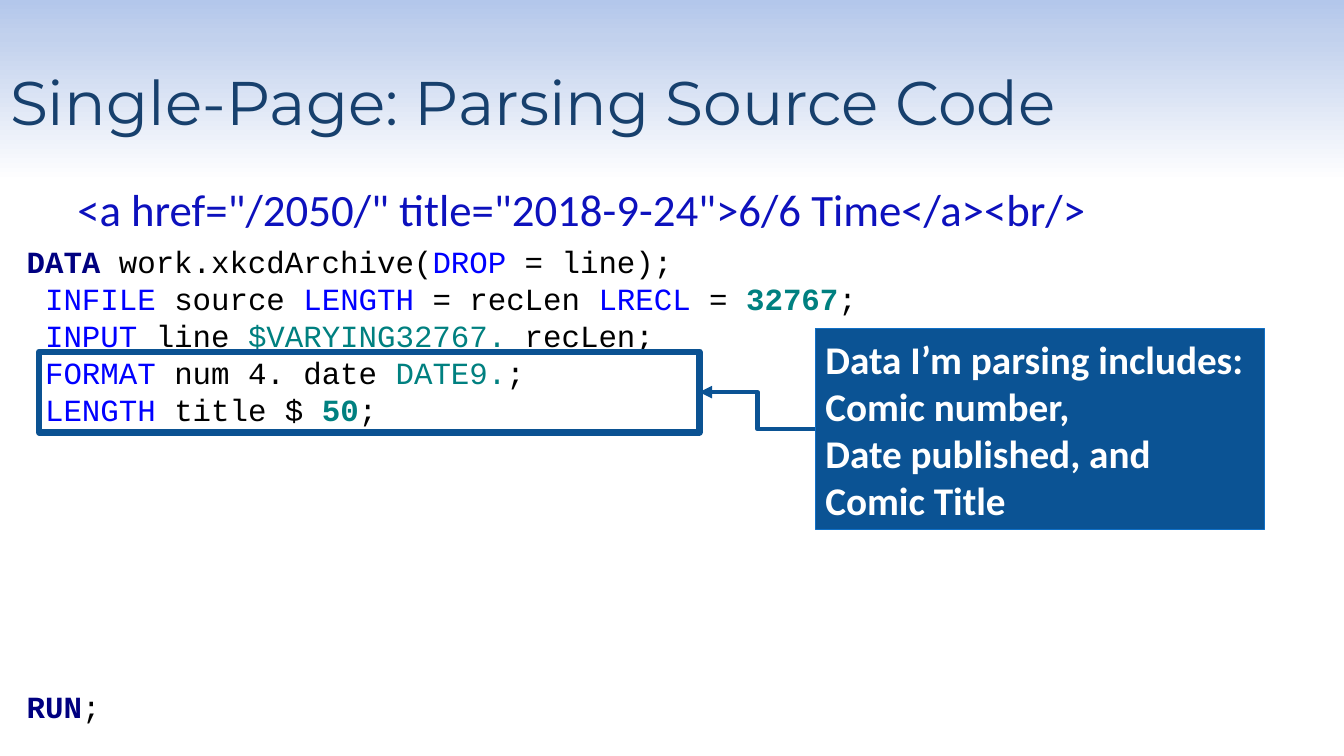
from lxml import etree
from pptx import Presentation
from pptx.dml.color import RGBColor
from pptx.enum import shapes, text
from pptx.oxml import ns
from pptx.util import Pt

TITLE_BLUE = RGBColor(0x17, 0x40, 0x6D)
TAG_BLUE = RGBColor(0x0D, 0x11, 0xBD)
CALLOUT_BLUE = RGBColor(0x0B, 0x53, 0x94)
CALLOUT_EDGE = RGBColor(0x0F, 0x6F, 0xC6)
FRAME_BLUE = RGBColor(0x0B, 0x52, 0x92)
WHITE = RGBColor(0xFF, 0xFF, 0xFF)
BLACK = RGBColor(0, 0, 0)
NAVY = RGBColor(0, 0, 0x80)
BLUE = RGBColor(0, 0, 0xFF)
TEAL = RGBColor(0, 0x80, 0x80)
SKY = RGBColor(0xB3, 0xC7, 0xEB)
PALE_SKY = RGBColor(0xC2, 0xD1, 0xED)

SKY_STOPS = [(0, SKY), (5, PALE_SKY), (24, WHITE), (100, WHITE)]

# Token kinds: colour and bold
STEP, KEYWORD, PLAIN = (NAVY, True), (BLUE, False), (BLACK, False)
NUMBER, FORMAT = (TEAL, True), (TEAL, False)

CODE = [
    [("DATA ", STEP), ("work.xkcdArchive(", PLAIN), ("DROP ", KEYWORD),
     ("= line);", PLAIN)],
    [(" INFILE ", KEYWORD), ("source ", PLAIN), ("LENGTH ", KEYWORD),
     ("= recLen ", PLAIN), ("LRECL ", KEYWORD), ("= ", PLAIN),
     ("32767", NUMBER), (";", PLAIN)],
    [(" INPUT ", KEYWORD), ("line ", PLAIN), ("$VARYING32767. ", FORMAT),
     ("recLen;", PLAIN)],
    [(" FORMAT ", KEYWORD), ("num 4. date ", PLAIN), ("DATE9.", FORMAT),
     (";", PLAIN)],
    [(" LENGTH ", KEYWORD), ("title $ ", PLAIN), ("50", NUMBER), (";", PLAIN)],
    [("RUN", STEP), (";", PLAIN)],
]
RUN_GAP = Pt(186)


def style(font, name, size, color, bold=False):
    font.name, font.size, font.bold = name, Pt(size), bold
    font.color.rgb = color


def paint_background(slide):
    fill = slide.background.fill
    fill.gradient()
    fill.gradient_angle = 270
    stops = fill._fill._gradFill.find(ns.qn("a:gsLst"))
    for stop in list(stops):
        stops.remove(stop)
    for percent, color in SKY_STOPS:
        stop = etree.SubElement(stops, ns.qn("a:gs"), pos=str(percent * 1000))
        etree.SubElement(stop, ns.qn("a:srgbClr"), val=str(color))


def fill_placeholder(holder, box, words, font_name, size, color):
    holder.left, holder.top, holder.width, holder.height = map(Pt, box)
    frame = holder.text_frame
    frame.text = words
    frame.auto_size = text.MSO_AUTO_SIZE.NONE
    line = frame.paragraphs[0]
    line.alignment = text.PP_ALIGN.LEFT
    line.space_before = Pt(0)
    properties = line._p.get_or_add_pPr()
    properties.set("marL", "0")
    properties.set("indent", "0")
    etree.SubElement(properties, ns.qn("a:buNone"))
    style(line.runs[0].font, font_name, size, color)
    return frame


def add_code(slide, box, lines):
    frame = slide.shapes.add_textbox(*map(Pt, box)).text_frame
    frame.word_wrap = True
    for number, tokens in enumerate(lines):
        line = frame.add_paragraph() if number else frame.paragraphs[0]
        for words, (color, bold) in tokens:
            run = line.add_run()
            run.text = words
            style(run.font, "Courier New", 22, color, bold)
    frame.paragraphs[-1].space_before = RUN_GAP


def add_box(slide, box, edge, edge_width, fill=None):
    rectangle = slide.shapes.add_shape(
        shapes.MSO_SHAPE.RECTANGLE, *map(Pt, box))
    rectangle.shadow.inherit = False
    if fill is None:
        rectangle.fill.background()
    else:
        rectangle.fill.solid()
        rectangle.fill.fore_color.rgb = fill
    rectangle.line.color.rgb = edge
    rectangle.line.width = Pt(edge_width)
    return rectangle


def write_callout(callout, words):
    frame = callout.text_frame
    frame.word_wrap = True
    frame.text = words
    line = frame.paragraphs[0]
    line.alignment = text.PP_ALIGN.LEFT
    for run in line.runs:
        style(run.font, "Calibri", 28, WHITE, True)


def add_elbow_arrow(slide, source, target):
    """Join the left side of source to the right side of target."""
    arrow = slide.shapes.add_connector(
        shapes.MSO_CONNECTOR.ELBOW, 0, 0, 0, 0)
    arrow.begin_connect(source, 1)
    arrow.end_connect(target, 3)
    arrow.line.color.rgb = CALLOUT_BLUE
    arrow.line.width = Pt(3)
    etree.SubElement(arrow.line._get_or_add_ln(), ns.qn("a:tailEnd"),
                     type="triangle")
    etree.SubElement(arrow._element.spPr, ns.qn("a:effectLst"))


def main():
    deck = Presentation()
    deck.slide_width, deck.slide_height = Pt(960), Pt(540)
    slide = deck.slides.add_slide(deck.slide_layouts[1])
    paint_background(slide)
    title = fill_placeholder(
        slide.shapes.title, (0, 36, 904.3, 72),
        "Single-Page: Parsing Source Code", "Montserrat", 44, TITLE_BLUE)
    title.vertical_anchor = text.MSO_ANCHOR.MIDDLE
    fill_placeholder(
        slide.placeholders[1], (48, 126, 864, 356.4),
        '<a href="/2050/" title="2018-9-24">6/6 Time</a><br/>',
        "Calibri", 32, TAG_BLUE)
    add_code(slide, (12, 170, 914.4, 353.5), CODE)
    callout = add_box(slide, (582.5, 235, 321.1, 143.1),
                      CALLOUT_EDGE, 0.75, CALLOUT_BLUE)
    write_callout(callout, "Data I’m parsing includes: Comic number,"
                           "\vDate published, and\vComic Title")
    frame = add_box(slide, (28, 251.3, 471.6, 57.6), FRAME_BLUE, 4.5)
    add_elbow_arrow(slide, callout, frame)
    deck.save("out.pptx")


if __name__ == "__main__":
    main()
